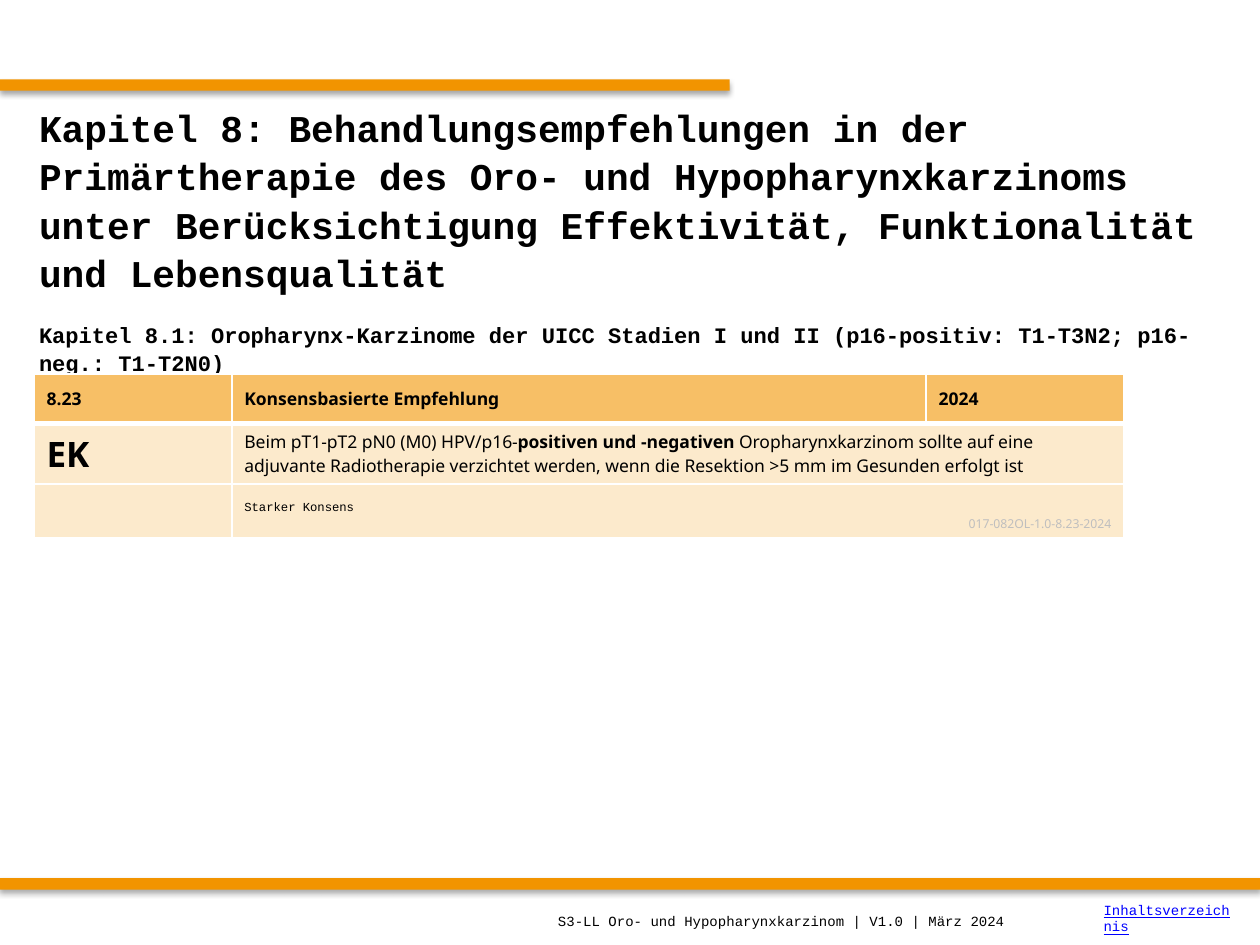
from lxml import etree
from pptx import Presentation
from pptx.dml.color import RGBColor
from pptx.enum.shapes import MSO_SHAPE
from pptx.enum.text import MSO_ANCHOR, PP_ALIGN
from pptx.oxml.ns import nsdecls, qn
from pptx.oxml import parse_xml
from pptx.util import Inches, Pt

ORANGE = RGBColor(0xF2, 0x94, 0x00)
HEADER = RGBColor(0xF7, 0xBF, 0x66)
BODY = RGBColor(0xFC, 0xEA, 0xCC)
BLACK = RGBColor(0, 0, 0)
GREY = RGBColor(0xBF, 0xBF, 0xBF)
BLUE = RGBColor(0, 0, 0xFF)
MONO, SANS = "Courier New", "Noto Sans"


def add_run(p, text, size=10, font=SANS, color=BLACK, bold=False, underline=None):
    r = p.add_run()
    r.text = text
    f = r.font
    f.size, f.name, f.bold, f.underline = Pt(size), font, bold, underline
    f.color.rgb = color
    return r


def add_bar(slide, x, y, w, h):
    """Orange rule with a soft shadow below it."""
    sp = slide.shapes.add_shape(MSO_SHAPE.RECTANGLE, *map(Inches, (x, y, w, h)))
    sp.fill.solid()
    sp.fill.fore_color.rgb = ORANGE
    sp.line.fill.background()
    sp.shadow.inherit = False
    sp._element.spPr.find(qn("a:effectLst")).append(parse_xml(
        f'<a:outerShdw {nsdecls("a")} blurRad="{Pt(3.1)}" dist="{Pt(1.8)}" '
        'dir="5400000" rotWithShape="0"><a:srgbClr val="000000">'
        '<a:alpha val="35000"/></a:srgbClr></a:outerShdw>'))


def add_title(slide, x, y, w, h):
    sp = slide.shapes.title
    sp.left, sp.top, sp.width, sp.height = map(Inches, (x, y, w, h))
    tf = sp.text_frame
    tf.word_wrap = True
    tf.vertical_anchor = MSO_ANCHOR.MIDDLE
    chapter, section = tf.paragraphs[0], tf.add_paragraph()
    for p in (chapter, section):
        p.alignment = PP_ALIGN.LEFT
        p.line_spacing = 1.07
        p.space_before = Pt(0)
    section.space_before = Pt(14)
    add_run(chapter, "Kapitel 8: Behandlungsempfehlungen in der Primärtherapie des Oro- und "
            "Hypopharynxkarzinoms unter Berücksichtigung Effektivität, Funktionalität und "
            "Lebensqualität", size=21.6, font=MONO, bold=True)
    add_run(section, "Kapitel 8.1: Oropharynx-Karzinome der UICC Stadien I und II "
            "(p16-positiv: T1-T3N2; p16-neg.: T1-T2N0)", size=12.6, font=MONO, bold=True)


def set_borders(cell, **widths):
    """White borders; widths in points by side (L, R, T, B), 1 by default."""
    tcPr = cell._tc.get_or_add_tcPr()
    for i, side in enumerate("LRTB"):
        ln = etree.Element(qn(f"a:ln{side}"), w=str(Pt(widths.get(side, 1))))
        fill = etree.SubElement(ln, qn("a:solidFill"))
        etree.SubElement(fill, qn("a:srgbClr"), val="FFFFFF")
        tcPr.insert(i, ln)


def add_recommendation(slide, x, y, col_widths, row_heights):
    """Table with a header, the recommendation and its level of consensus."""
    table = slide.shapes.add_table(
        len(row_heights), len(col_widths), Inches(x), Inches(y),
        Inches(sum(col_widths)), Inches(sum(row_heights))).table
    for col, w in zip(table.columns, col_widths):
        col.width = Inches(w)
    for i, (row, h) in enumerate(zip(table.rows, row_heights)):
        row.height = Inches(h)
        for cell in row.cells:
            set_borders(cell, **({"B": 3}, {"T": 3}, {})[i])
            cell.fill.solid()
            cell.fill.fore_color.rgb = BODY if i else HEADER
        if i:
            table.cell(i, 1).merge(table.cell(i, 2))

    for j, text in enumerate(("8.23", "Konsensbasierte Empfehlung", "2024")):
        cell = table.cell(0, j)
        cell.vertical_anchor = MSO_ANCHOR.MIDDLE
        add_run(cell.text_frame.paragraphs[0], text, bold=True)

    add_run(table.cell(1, 0).text_frame.paragraphs[0], "EK", size=20, bold=True)
    p = table.cell(1, 1).text_frame.paragraphs[0]
    add_run(p, "Beim pT1-pT2 pN0 (M0) HPV/p16-")
    add_run(p, "positiven und -negativen ", bold=True)
    add_run(p, "Oropharynxkarzinom sollte auf eine adjuvante Radiotherapie verzichtet "
            "werden, wenn die Resektion >5 mm im Gesunden erfolgt ist")

    consensus = table.cell(2, 1)
    consensus.vertical_anchor = MSO_ANCHOR.BOTTOM
    tf = consensus.text_frame
    add_run(tf.paragraphs[0], "Starker Konsens", size=7, font=MONO)
    p = tf.add_paragraph()
    p.alignment = PP_ALIGN.RIGHT
    add_run(p, "017-082OL-1.0-8.23-2024", size=7, color=GREY)


def add_footer_text(slide, text, x, y, w, h, **fmt):
    tf = slide.shapes.add_textbox(*map(Inches, (x, y, w, h))).text_frame
    tf.word_wrap = True
    tf.vertical_anchor = MSO_ANCHOR.MIDDLE
    add_run(tf.paragraphs[0], text, size=8, font=MONO, **fmt)


def main():
    prs = Presentation()
    prs.slide_width, prs.slide_height = Inches(10), Inches(7.5)
    slide = prs.slides.add_slide(prs.slide_layouts[5])
    add_bar(slide, 0, 0.63, 5.79, 0.09)
    add_bar(slide, 0, 6.97, 10, 0.09)
    add_title(slide, 0.21, 0.83, 9.5, 2.13)
    add_recommendation(slide, 0.27, 2.97, (1.57, 5.51, 1.57), (0.39, 0.48, 0.43))
    add_footer_text(slide, "S3-LL Oro- und Hypopharynxkarzinom | V1.0 | März 2024",
                    4.33, 7.11, 5.51, 0.39)
    add_footer_text(slide, "Inhaltsverzeichnis", 8.66, 7.09, 1.22, 0.39,
                    color=BLUE, underline=True)
    prs.save("out.pptx")


if __name__ == "__main__":
    main()
